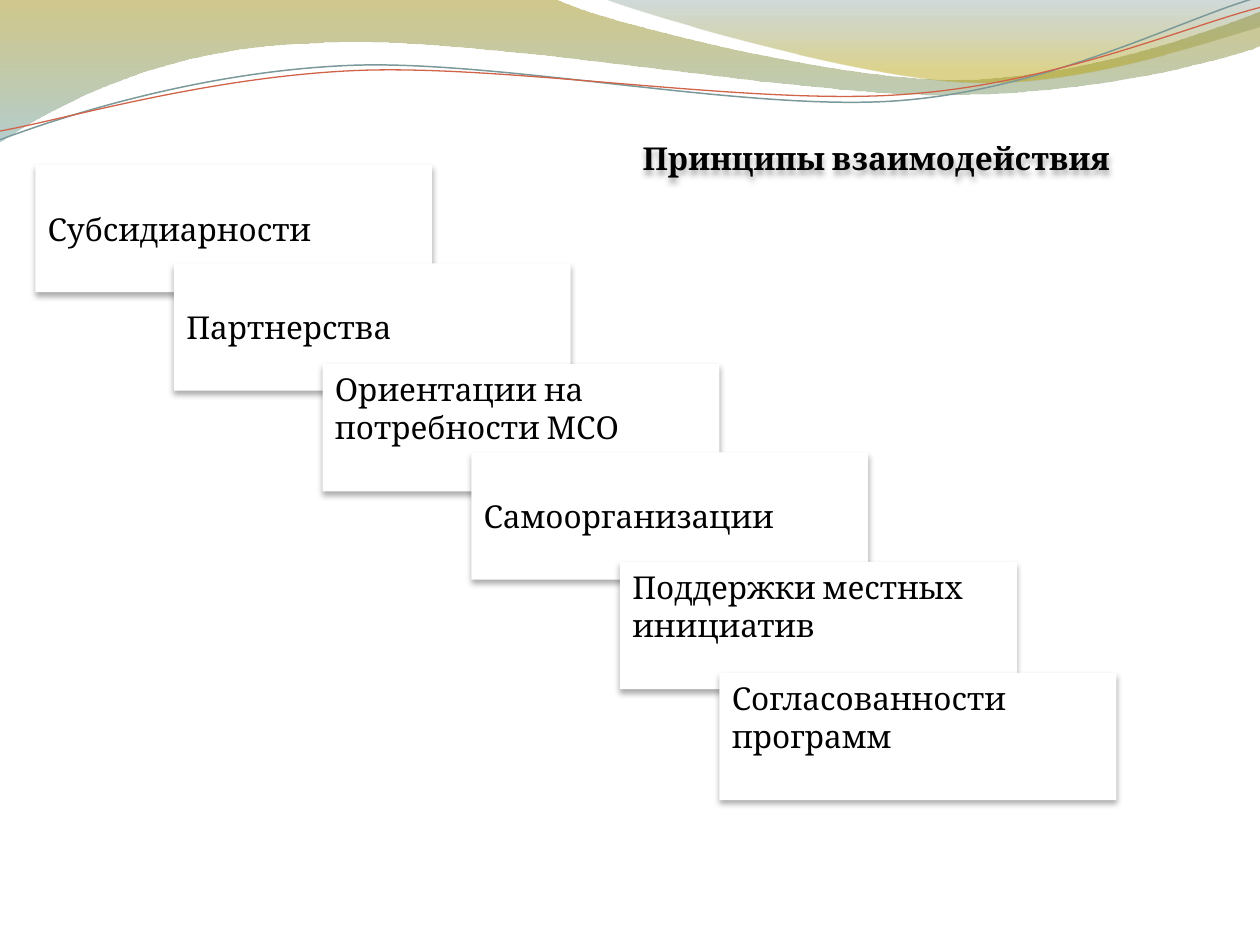
from math import cos, radians, sin
from lxml.etree import SubElement
from pptx import Presentation
from pptx.dml.color import RGBColor
from pptx.enum.shapes import MSO_SHAPE
from pptx.enum.text import MSO_ANCHOR, MSO_AUTO_SIZE, PP_ALIGN
from pptx.oxml.ns import qn
from pptx.util import Inches, Pt

WIDE, HIGH = Inches(10), Inches(7.5)
COL, ROW = WIDE / 10, HIGH / 7.5
TILT = -2.7

BANDS = [
    ([[(0, 0)], [(4.4, -0.01)],
      [(4.76, 0.17), (6.64, 0.63), (7.58, 0.63)],
      [(8.53, 0.63), (9.58, 0.26), (10, 0.09)],
      [(10.01, 0.36)],
      [(9.83, 0.44), (8.7, 0.76), (7.46, 0.75)],
      [(6.22, 0.75), (3.82, 0.28), (2.57, 0.34)],
      [(1.29, 0.36), (0.46, 0.83), (-0.01, 1.13)]],
     [(0, "978500", 45), (1, "77A5A6", 55)]),
    ([[(4.79, -0.01)],
      [(5.09, 0.11), (6.82, 0.62), (7.69, 0.65)],
      [(8.56, 0.69), (9.61, 0.32), (10, 0.21)],
      [(10, 0)]],
     [(0, "648484", 30), (0.8, "B49F00", 45)]),
]
LINES = [
    ([[(0, 1.11)],
      [(0.48, 0.93), (1.58, 0.57), (2.77, 0.52)],
      [(3.95, 0.47), (5.93, 0.89), (7.13, 0.8)],
      [(8.33, 0.71), (9.38, 0.15), (9.98, -0.02)]], "7C999A", 0.85),
    ([[(0, 1.04)],
      [(0.47, 0.96), (1.64, 0.61), (2.83, 0.56)],
      [(4.03, 0.51), (5.97, 0.84), (7.17, 0.75)],
      [(8.36, 0.67), (9.41, 0.21), (10, 0.06)]], "D16349", 0.75),
]
STEPS = [
    (0.28, 1.31, "Субсидиарности", MSO_ANCHOR.MIDDLE),
    (1.38, 2.09, "Партнерства", MSO_ANCHOR.MIDDLE),
    (2.56, 2.89, "Ориентации на потребности МСО", MSO_ANCHOR.TOP),
    (3.74, 3.59, "Самоорганизации", MSO_ANCHOR.MIDDLE),
    (4.92, 4.46, "Поддержки местных инициатив", MSO_ANCHOR.TOP),
    (5.71, 5.34, "Согласованности программ", MSO_ANCHOR.TOP),
]


def paint(code):
    return RGBColor.from_string(code)


def style(item, form):
    for name, value in form.items():
        setattr(item, name, value)


def place(item, box):
    left, top, width, height = box
    style(item, {"left": int(left * COL), "top": int(top * ROW),
                 "width": int(width * COL), "height": int(height * ROW)})


def turn(spot, pivot, angle):
    turned = radians(angle)
    x, y = spot[0] - pivot[0], spot[1] - pivot[1]
    return (pivot[0] + x * cos(turned) - y * sin(turned),
            pivot[1] + x * sin(turned) + y * cos(turned))


def bend(shape, parts):
    legs = iter(list(shape.element.spPr.iter(qn("a:lnTo"))))
    for part in parts[1:]:
        group = [next(legs) for _ in part]
        if len(group) == 3:
            curve = group[0].makeelement(qn("a:cubicBezTo"))
            group[0].addprevious(curve)
            for leg in group:
                curve.append(leg[0])
                leg.getparent().remove(leg)


def draw(slide, box, parts, close, tilt=0):
    pivot = (box[2] / 2, box[3] / 2)
    spots = [turn(spot, pivot, -tilt) for part in parts for spot in part]
    spots = [(int((box[0] + x) * COL), int((box[1] + y) * ROW))
             for x, y in spots]
    pen = slide.shapes.build_freeform(*spots[0])
    pen.add_line_segments(spots[1:], close=close)
    shape = pen.convert_to_shape()
    bend(shape, parts)
    shape.rotation = tilt
    shape.shadow.inherit = False
    return shape


def blend(shape, stops):
    fill = shape.fill
    fill.gradient()
    fill.gradient_angle = 270
    for stop, (spot, code, _) in zip(fill.gradient_stops, stops):
        stop.color.rgb = paint(code)
        stop.position = spot
    tones = shape.element.spPr.iter(qn("a:srgbClr"))
    for tone, (_, _, share) in zip(tones, stops):
        SubElement(tone, qn("a:alpha"), val=str(share * 1000))


def shade(shape):
    shape.shadow.inherit = False
    effect = shape.element.spPr.find(qn("a:effectLst"))
    cast = SubElement(effect, qn("a:outerShdw"), blurRad=str(Pt(3.5)),
                      dist=str(Pt(2.2)), dir="5400000", rotWithShape="0")
    tone = SubElement(cast, qn("a:srgbClr"), val="000000")
    SubElement(tone, qn("a:alpha"), val="32000")


def write(shape, text, anchor, bold=False):
    frame = shape.text_frame
    frame.text = text
    style(frame, {"word_wrap": True, "auto_size": MSO_AUTO_SIZE.NONE,
                  "vertical_anchor": anchor})
    para = frame.paragraphs[0]
    para.alignment = PP_ALIGN.LEFT
    style(para.runs[0].font, {"name": "Cambria", "size": Pt(18), "bold": bold})
    para.runs[0].font.color.rgb = paint("000000")


def waves(slide, box):
    for parts, stops in BANDS:
        band = draw(slide, box, parts, True)
        blend(band, stops)
        band.line.fill.background()
    for parts, code, width in LINES:
        curve = draw(slide, box, parts, False, TILT)
        curve.fill.background()
        curve.line.color.rgb = paint(code)
        curve.line.width = Pt(width)


def stairs(slide, box):
    for left, top, text, anchor in STEPS:
        card = slide.shapes.add_shape(MSO_SHAPE.RECTANGLE, 0, 0, 0, 0)
        place(card, (box[0] + left, box[1] + top, 3.15, 1.01))
        card.fill.solid()
        card.fill.fore_color.rgb = paint("FFFFFF")
        card.line.fill.background()
        shade(card)
        write(card, text, anchor)


def heading(slide, box):
    title = slide.shapes.title
    place(title, box)
    write(title, "Принципы взаимодействия", MSO_ANCHOR.TOP, True)
    title.text_frame.margin_top = int(0.34 * ROW)
    shade(title)


def main():
    deck = Presentation()
    style(deck, {"slide_width": WIDE, "slide_height": HIGH})
    slide = deck.slides.add_slide(deck.slide_layouts[5])
    waves(slide, (0, 0, 10, 1.14))
    stairs(slide, (0, 0, 10, 7.5))
    heading(slide, (5, 0.76, 4.02, 0.71))
    deck.save("out.pptx")


if __name__ == "__main__":
    main()
